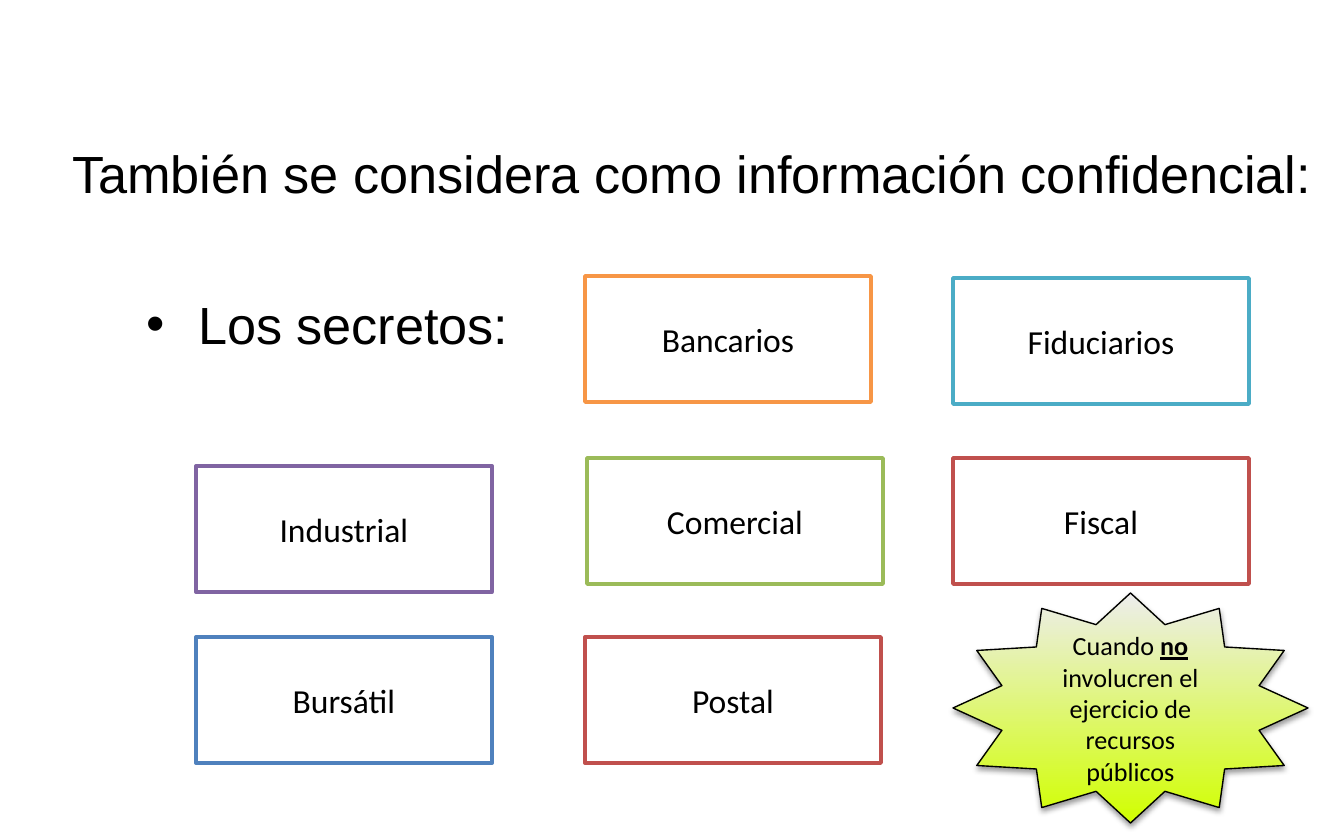
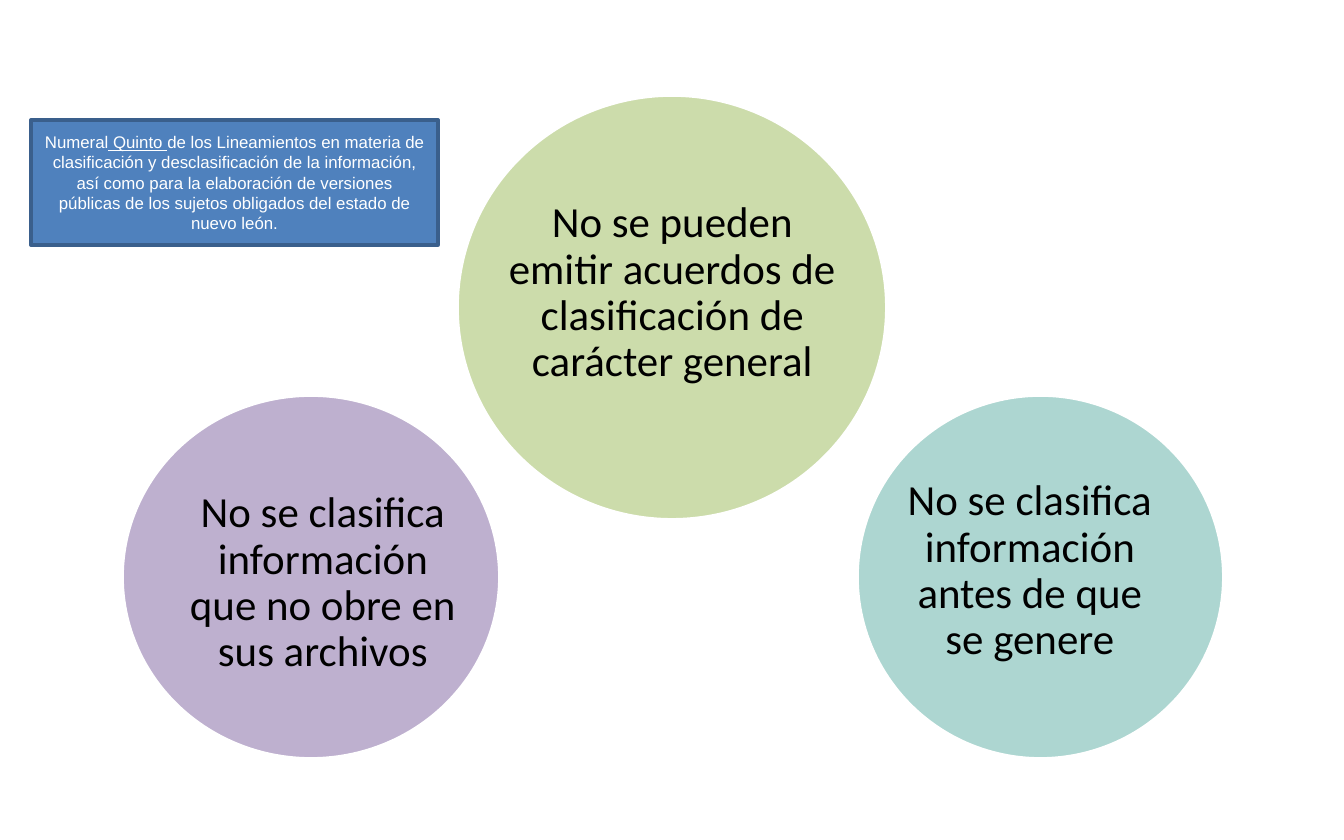
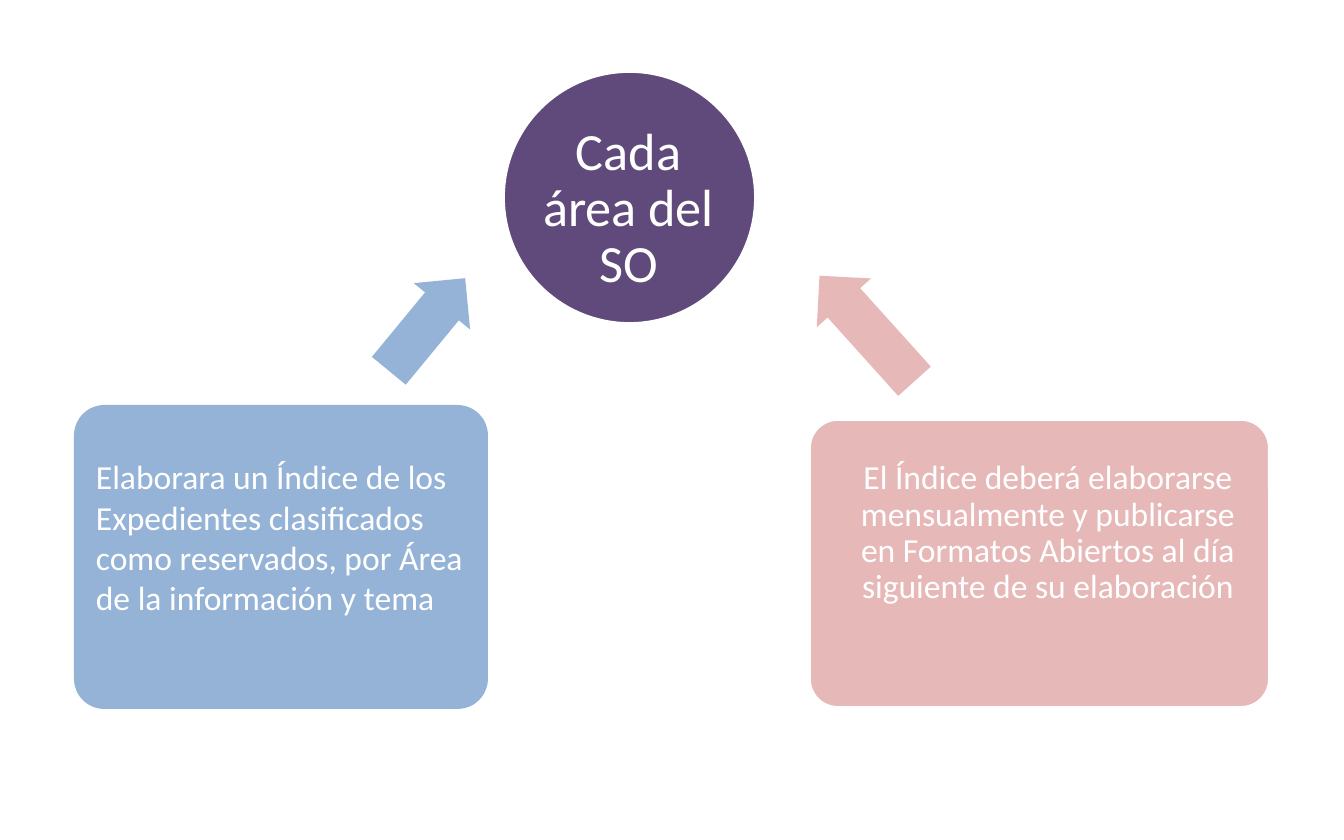
"""Build three slides on confidential and classified information."""
from dataclasses import dataclass
from lxml.etree import SubElement
from pptx import Presentation
from pptx.dml.color import RGBColor
from pptx.enum.shapes import MSO_SHAPE
from pptx.enum.text import MSO_ANCHOR, PP_ALIGN
from pptx.oxml.ns import qn
from pptx.util import Pt


@dataclass(frozen=True)
class Theme:
    """Colours, fonts and type sizes."""
    black: str = "000000"
    white: str = "FFFFFF"
    blue: str = "4F81BD"
    navy: str = "3A5F8C"
    red: str = "C0504D"
    green: str = "9BBB59"
    violet: str = "8064A2"
    aqua: str = "4BACC6"
    orange: str = "F79646"
    teal: str = "5DAEA5"
    mauve: str = "7F63A1"
    plum: str = "604A7B"
    sky: str = "95B3D7"
    rose: str = "E6B9B8"
    lime: str = "D1FF00"
    mist: str = "EDEDED"
    head: str = "Arial"
    body: str = "Calibri"
    big: int = 28
    mid: int = 23
    base: int = 18
    small: int = 14
    tiny: int = 9


T = Theme()
SCALE = 914400 / 134.4
WIDE, HIGH = 1344, 840
CARD_W, CARD_H = 296, 126
EDGE = 2

TITLE = "También se considera como información confidencial:"
LEAD = "Los secretos:"
CARDS = [
    ("Bancarios", 585, 276, 286, T.orange),
    ("Fiduciarios", 953, 278, CARD_W, T.aqua),
    ("Industrial", 196, 466, CARD_W, T.violet),
    ("Comercial", 587, 458, CARD_W, T.green),
    ("Fiscal", 953, 458, CARD_W, T.red),
    ("Bursátil", 196, 637, CARD_W, T.blue),
    ("Postal", 585, 637, CARD_W, T.red),
]
STAR = [("Cuando ", ""), ("no", "bu"),
        (" involucren el ejercicio de recursos públicos", "")]
RULES = [
    ("No se pueden emitir acuerdos de clasificación de carácter general",
     (457, 95, 430, 425), (507, 192, 331, 203), T.green),
    ("No se clasifica información antes de que se genere",
     (857, 395, 367, 364), (895, 448, 270, 247), T.teal),
    ("No se clasifica información que no obre en sus archivos",
     (122, 395, 378, 364), (188, 460, 270, 247), T.mauve),
]
SOURCE = [("Numeral", ""), (" Quinto ", "u"),
          ("de los Lineamientos en materia de clasificación y "
           "desclasificación de la información, así como para la "
           "elaboración de versiones públicas de los sujetos obligados "
           "del estado de nuevo león.", "")]
AREA = "Cada área del SO"
INDEX = ("Elaborara un Índice de los Expedientes clasificados como "
         "reservados, por Área de la información y tema")
MONTHLY = ("El Índice deberá elaborarse mensualmente y publicarse en "
           "Formatos Abiertos al día siguiente de su elaboración")
ARROWS = [((367, 288, 120, 73), 129.5, T.sky),
          ((796, 292, 142, 73), 48, T.rose)]


def px(num):
    """Turn px into EMU."""
    return round(num * SCALE)


def rgb(code):
    """Turn a hex code into a colour."""
    return RGBColor.from_string(code)


def write(shape, text, size, font=T.body, color=T.black, align=PP_ALIGN.CENTER,
          anchor=MSO_ANCHOR.MIDDLE, pad=(13, 7, 13, 7), lead=None, bullet=0):
    """Put one paragraph into a shape."""
    frame = shape.text_frame
    frame.word_wrap = True
    frame.vertical_anchor = anchor
    (frame.margin_left, frame.margin_top,
     frame.margin_right, frame.margin_bottom) = map(px, pad)
    para = frame.paragraphs[0]
    para.alignment = align
    if lead:
        para.line_spacing = lead
    if bullet:
        props = para._p.get_or_add_pPr()
        props.set("marL", str(px(bullet)))
        props.set("indent", str(-px(bullet)))
        SubElement(props, qn("a:buFont"), typeface=T.head)
        SubElement(props, qn("a:buChar"), char="•")
    para.font.name = font
    para.font.size = Pt(size)
    para.font.color.rgb = rgb(color)
    for part, style in [(text, "")] if isinstance(text, str) else text:
        run = para.add_run()
        run.text = part
        if "b" in style:
            run.font.bold = True
        if "u" in style:
            run.font.underline = True


def label(slide, box, text, size, **kind):
    """Add a text box."""
    write(slide.shapes.add_textbox(*map(px, box)), text, size, **kind)


def draw(slide, kind, box, fill, line=None, width=EDGE, adjust=(), alpha=None):
    """Add a preset shape with a flat fill."""
    shape = slide.shapes.add_shape(kind, *map(px, box))
    shape.shadow.inherit = False
    shape.fill.solid()
    shape.fill.fore_color.rgb = rgb(fill)
    if alpha:
        tint = shape._element.spPr.find(qn("a:solidFill"))[0]
        SubElement(tint, qn("a:alpha"), val=str(alpha * 1000))
    if line:
        shape.line.color.rgb = rgb(line)
        shape.line.width = Pt(width)
    else:
        shape.line.fill.background()
    for spot, value in enumerate(adjust):
        shape.adjustments[spot] = value
    return shape


def glow(shape):
    """Give a shape the lime gradient and a soft shadow."""
    shape.fill.gradient()
    shape.fill.gradient_angle = 90
    for stop, code in zip(shape.fill.gradient_stops, (T.lime, T.mist)):
        stop.color.rgb = rgb(code)
    effects = shape._element.spPr.find(qn("a:effectLst"))
    shade = SubElement(effects, qn("a:outerShdw"), blurRad="40000",
                       dist="20000", dir="5400000", rotWithShape="0")
    tint = SubElement(shade, qn("a:srgbClr"), val=T.black)
    SubElement(tint, qn("a:alpha"), val="38000")


def secrets(slide):
    """Show the kinds of secret."""
    label(slide, (58, 103, 1267, 140), TITLE, T.big, font=T.head)
    label(slide, (134, 285, 419, 86), LEAD, T.big, font=T.head,
          align=PP_ALIGN.LEFT, anchor=MSO_ANCHOR.TOP, bullet=51)
    for text, left, top, wide, line in CARDS:
        card = draw(slide, MSO_SHAPE.RECTANGLE, (left, top, wide, CARD_H),
                    T.white, line)
        write(card, text, T.base)
    star = draw(slide, MSO_SHAPE.STAR_12_POINT, (953, 593, 355, 230),
                T.lime, T.black, 0.75, (0.375,))
    glow(star)
    write(star, STAR, T.small)


def limits(slide):
    """Show the limits on classifying."""
    for text, disc, box, fill in RULES:
        draw(slide, MSO_SHAPE.OVAL, disc, fill, T.white, alpha=50)
        label(slide, box, text, T.mid, pad=(0, 0, 0, 0), lead=0.9)
    note = draw(slide, MSO_SHAPE.RECTANGLE, (31, 120, 407, 125),
                T.blue, T.navy)
    write(note, SOURCE, T.tiny, font=T.head, color=T.white)


def duties(slide):
    """Show what each area must do."""
    draw(slide, MSO_SHAPE.OVAL, (503, 71, 253, 253), T.plum, T.white)
    label(slide, (539, 120, 179, 179), AREA, T.big, color=T.white,
          pad=(3, 3, 3, 3), lead=0.9)
    for box, turn, fill in ARROWS:
        arrow = draw(slide, MSO_SHAPE.LEFT_ARROW, box, fill, adjust=(0.6, 0.5))
        arrow.rotation = turn
    card = draw(slide, MSO_SHAPE.ROUNDED_RECTANGLE, (74, 405, 414, 304),
                T.sky, adjust=(0.1,))
    write(card, INDEX, T.base, color=T.white, align=PP_ALIGN.LEFT,
          pad=(13, 13, 13, 53))
    draw(slide, MSO_SHAPE.ROUNDED_RECTANGLE, (809, 419, 461, 289),
         T.rose, T.white, adjust=(0.1,))
    label(slide, (847, 454, 402, 196), MONTHLY, T.base, color=T.white,
          anchor=MSO_ANCHOR.TOP, lead=0.9)


def main():
    """Build and save the deck."""
    deck = Presentation()
    deck.slide_width, deck.slide_height = px(WIDE), px(HIGH)
    for build in (secrets, limits, duties):
        build(deck.slides.add_slide(deck.slide_layouts[6]))
    deck.save("out.pptx")


if __name__ == "__main__":
    main()
